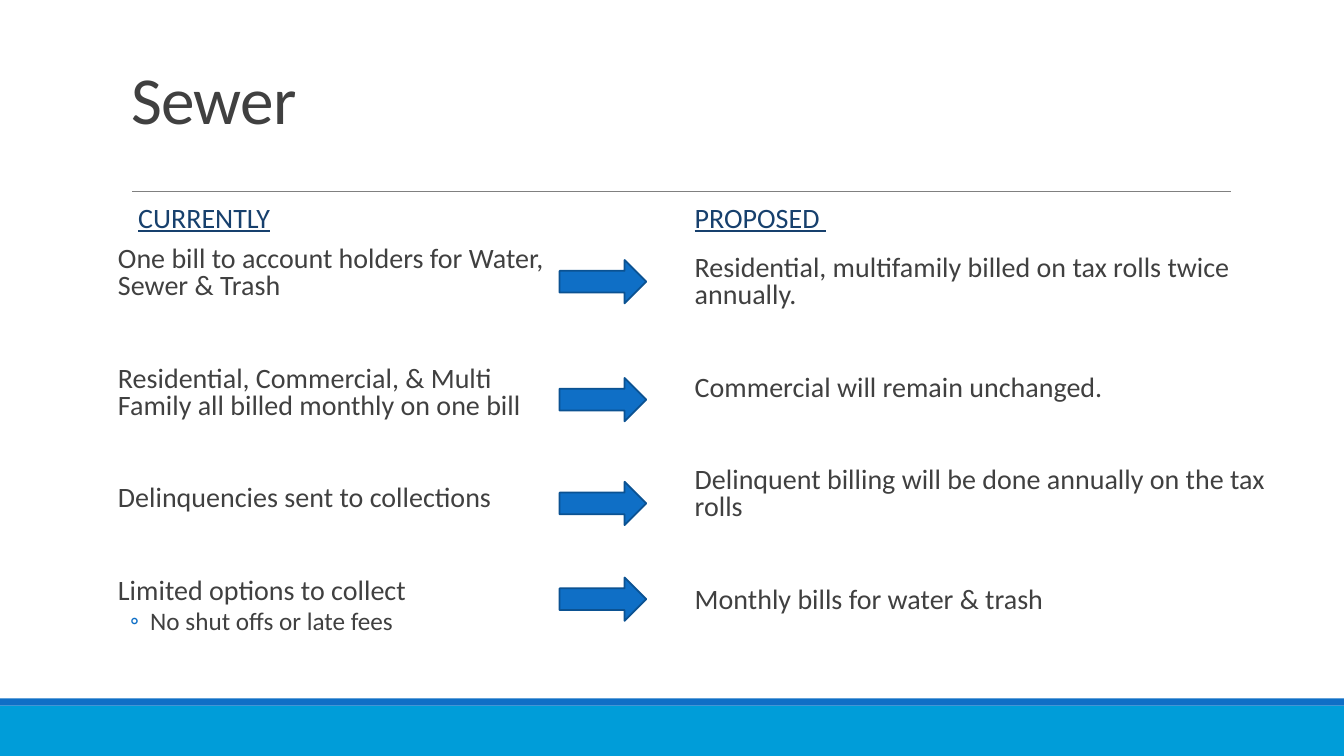
import pptx
import pptx.dml.color
import pptx.enum.shapes
import pptx.enum.text
import pptx.oxml
import pptx.oxml.ns
import pptx.util
from pptx.util import Inches

BLUE = "0F6FC6"
CYAN = "009DD9"
NAVY = "17406D"
DARK = "404040"
MIDDLE = pptx.enum.text.MSO_ANCHOR.MIDDLE
TOP = pptx.enum.text.MSO_ANCHOR.TOP
BOTTOM = pptx.enum.text.MSO_ANCHOR.BOTTOM


def set_color(color_format, value):
    color_format.rgb = pptx.dml.color.RGBColor.from_string(value)


def add_line(paragraph, text, size, color, spacing, before=0, after=0, indent=0, bullet=None):
    paragraph.alignment = pptx.enum.text.PP_ALIGN.LEFT
    paragraph.line_spacing = spacing
    paragraph.space_before = pptx.util.Pt(before)
    paragraph.space_after = pptx.util.Pt(after)
    properties = paragraph._p.get_or_add_pPr()
    properties.set("marL", str(Inches(indent)))
    properties.set("indent", str(Inches(-0.2 if bullet else 0)))
    namespace = pptx.oxml.ns.nsdecls("a")
    if bullet:
        marks = [f'<a:buClr {namespace}><a:srgbClr val="{BLUE}"/></a:buClr>',
                 f'<a:buFont {namespace} typeface="Calibri"/>',
                 f'<a:buChar {namespace} char="{bullet}"/>']
    else:
        marks = [f"<a:buNone {namespace}/>"]
    for mark in marks:
        properties.append(pptx.oxml.parse_xml(mark))
    run = paragraph.add_run()
    run.text = text
    run.font.name = "Calibri"
    run.font.size = pptx.util.Pt(size)
    run.font.bold = False
    set_color(run.font.color, color)
    return run


presentation = pptx.Presentation()
presentation.slide_width = Inches(13.33)
presentation.slide_height = Inches(7.5)
slide = presentation.slides.add_slide(presentation.slide_layouts.get_by_name("Comparison"))
title, current_heading, current_list, proposed_heading, proposed_list = list(slide.placeholders)[:5]

for placeholder, left, top, width, height, anchor in [
    (title, 1.2, 0.31, 11, 1.11, BOTTOM),
    (current_heading, 1.27, 1.77, 5.4, 0.81, MIDDLE),
    (current_list, 1.07, 2.4, 4.48, 4.06, TOP),
    (proposed_heading, 6.79, 1.77, 5.4, 0.81, MIDDLE),
    (proposed_list, 6.79, 2.49, 6.09, 3.88, TOP),
]:
    placeholder.left, placeholder.top = Inches(left), Inches(top)
    placeholder.width, placeholder.height = Inches(width), Inches(height)
    placeholder.text_frame.vertical_anchor = anchor
    placeholder.text_frame.word_wrap = True
    placeholder.text_frame.auto_size = pptx.enum.text.MSO_AUTO_SIZE.NONE

title_run = add_line(title.text_frame.paragraphs[0], "Sewer", 48, DARK, 0.85)
title_run._r.get_or_add_rPr().set("spc", "-50")

for heading, text in [(current_heading, "CURRENTLY"), (proposed_heading, "PROPOSED ")]:
    heading_run = add_line(heading.text_frame.paragraphs[0], text, 20, NAVY, 0.9, 12, 2)
    heading_run.font.underline = True

for body, items in [
    (current_list, [
        "One bill to account holders for Water, Sewer & Trash",
        "Residential, Commercial, & Multi Family all billed monthly on one bill",
        "Delinquencies sent to collections",
        "Limited options to collect",
    ]),
    (proposed_list, [
        "Residential, multifamily billed on tax rolls twice annually.",
        "Commercial will remain unchanged.",
        "Delinquent billing will be done annually on the tax rolls",
        "Monthly bills for water & trash",
    ]),
]:
    frame = body.text_frame
    frame.margin_left = frame.margin_right = 0
    for index, item in enumerate(items):
        paragraph = frame.add_paragraph() if index else frame.paragraphs[0]
        add_line(paragraph, item, 20, DARK, 0.8, 45 if index else 12, 2, 0.1)

paragraph = current_list.text_frame.add_paragraph()
paragraph.level = 1
add_line(paragraph, "No shut offs or late fees", 18, DARK, 0.8, 2, 4, 0.42, "◦")

divider = slide.shapes.add_connector(
    pptx.enum.shapes.MSO_CONNECTOR.STRAIGHT, Inches(1.31), Inches(1.9), Inches(12.21), Inches(1.9))
set_color(divider.line.color, "808080")
divider.line.width = pptx.util.Pt(0.5)
divider._element.spPr.append(pptx.oxml.parse_xml(f'<a:effectLst {pptx.oxml.ns.nsdecls("a")}/>'))

rectangle = pptx.enum.shapes.MSO_SHAPE.RECTANGLE
arrow = pptx.enum.shapes.MSO_SHAPE.RIGHT_ARROW
bars = [(rectangle, 0, 7, 13.33, 0.5, CYAN), (rectangle, 0, 6.93, 13.33, 0.07, BLUE)]
arrows = [(arrow, 5.55, top, 0.86, 0.43, BLUE) for top in (2.58, 3.75, 4.78, 5.73)]
for kind, left, top, width, height, fill in bars + arrows:
    shape = slide.shapes.add_shape(kind, Inches(left), Inches(top), Inches(width), Inches(height))
    shape.shadow.inherit = False
    shape.fill.solid()
    set_color(shape.fill.fore_color, fill)
    if kind == arrow:
        set_color(shape.line.color, "0B5292")
        shape.line.width = pptx.util.Pt(1.25)
    else:
        shape.line.fill.background()

presentation.save("out.pptx")
